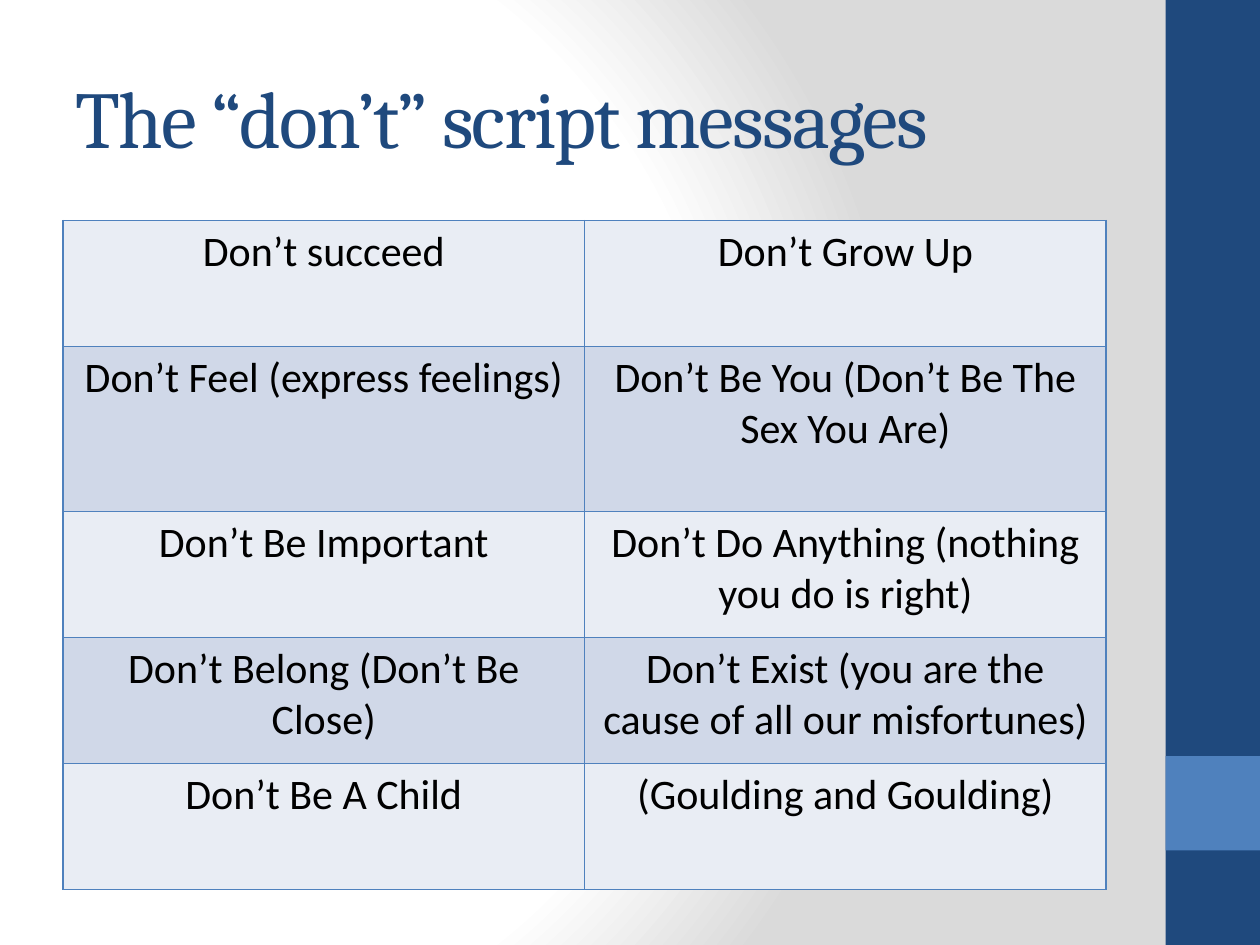
from dataclasses import dataclass

from lxml import etree
from pptx import Presentation
from pptx.dml.color import RGBColor
from pptx.enum.shapes import MSO_SHAPE
from pptx.enum.text import MSO_ANCHOR, PP_ALIGN
from pptx.oxml.ns import qn
from pptx.util import Inches, Pt

RECTANGLE = MSO_SHAPE.RECTANGLE
MIDDLE = MSO_ANCHOR.MIDDLE
LEFT, CENTER = PP_ALIGN.LEFT, PP_ALIGN.CENTER
TITLE_ONLY = 5


@dataclass(frozen=True)
class Theme:
    """Colours, fonts and sizes of the deck."""
    navy: str = "1F497D"
    blue: str = "4F81BD"
    black: str = "000000"
    bands: tuple = ("E9EDF4", "D0D8E8")
    backdrop: tuple = ((0, "FFFFFF"), (75, "FFFFFF"), (100, "DADADA"))
    title_font: str = "Cambria"
    body_font: str = "Calibri"
    title_size: int = 46
    body_size: int = 24
    border_width: int = 1


THEME = Theme()

MESSAGES = [
    ("Don’t succeed", "Don’t Grow Up"),
    ("Don’t Feel (express feelings)", "Don’t Be You (Don’t Be The Sex You Are)"),
    ("Don’t Be Important", "Don’t Do Anything (nothing you do is right)"),
    ("Don’t Belong (Don’t Be Close)",
     "Don’t Exist (you are the cause of all our misfortunes)"),
    ("Don’t Be A Child", "(Goulding and Goulding)"),
]
ROW_HEIGHTS = [1, 1.31, 1, 1, 1]
COLUMN_WIDTH = 4.14


def add_node(parent, tag, **attributes):
    """Append an XML child and return it."""
    return etree.SubElement(parent, qn(tag), attributes)


def write_text(frame, text, *, font, size, color, align=LEFT, spacing=None):
    """Fill a text frame with one formatted paragraph."""
    para = frame.paragraphs[0]
    para.alignment = align
    span = para.add_run()
    span.text = text
    span.font.name = font
    span.font.size = Pt(size)
    span.font.color.rgb = RGBColor.from_string(color)
    if spacing is not None:
        span.font._element.set("spc", str(spacing * 100))


def set_backdrop(page):
    """Give the page its circular gradient background."""
    page.background.fill.solid()
    properties = page._element.find(".//" + qn("p:bgPr"))
    properties.remove(properties.find(qn("a:solidFill")))
    gradient = etree.Element(qn("a:gradFill"), rotWithShape="1")
    properties.insert(0, gradient)
    stops = add_node(gradient, "a:gsLst")
    for position, color in THEME.backdrop:
        stop = add_node(stops, "a:gs", pos=str(position * 1000))
        add_node(stop, "a:srgbClr", val=color)
    circle = add_node(gradient, "a:path", path="circle")
    add_node(circle, "a:fillToRect", l="20000", t="50000", r="100000", b="50000")


def add_block(page, left, top, width, height, color):
    """Add a plain filled rectangle."""
    block = page.shapes.add_shape(
        RECTANGLE, Inches(left), Inches(top), Inches(width), Inches(height))
    block.shadow.inherit = False
    block.fill.solid()
    block.fill.fore_color.rgb = RGBColor.from_string(color)
    block.line.fill.background()


def set_title(page, text):
    """Place and format the title placeholder."""
    title = page.shapes.title
    title.left, title.top = Inches(0.5), Inches(0.3)
    title.width, title.height = Inches(8.33), Inches(1.25)
    title.text_frame.vertical_anchor = MIDDLE
    title.text_frame.word_wrap = True
    write_text(title.text_frame, text, font=THEME.title_font,
               size=THEME.title_size, color=THEME.navy, spacing=-1)


def set_borders(cell):
    """Draw a thin line on all four sides of a cell."""
    properties = cell._tc.get_or_add_tcPr()
    for index, side in enumerate(("a:lnL", "a:lnR", "a:lnT", "a:lnB")):
        line = etree.Element(qn(side), w=str(Pt(THEME.border_width)))
        properties.insert(index, line)
        fill = add_node(line, "a:solidFill")
        add_node(fill, "a:srgbClr", val=THEME.blue)


def add_message_table(page):
    """Add the banded table of script messages."""
    columns = len(MESSAGES[0])
    table = page.shapes.add_table(
        len(MESSAGES), columns, Inches(0.5), Inches(1.75),
        Inches(columns * COLUMN_WIDTH), Inches(sum(ROW_HEIGHTS))).table
    table.first_row = table.horz_banding = False
    for column in table.columns:
        column.width = Inches(COLUMN_WIDTH)
    for row, (height, messages) in enumerate(zip(ROW_HEIGHTS, MESSAGES)):
        table.rows[row].height = Inches(height)
        band = THEME.bands[row % len(THEME.bands)]
        for cell, message in zip(table.rows[row].cells, messages):
            cell.fill.solid()
            cell.fill.fore_color.rgb = RGBColor.from_string(band)
            set_borders(cell)
            write_text(cell.text_frame, message, font=THEME.body_font,
                       size=THEME.body_size, color=THEME.black, align=CENTER)


def main():
    """Build the slide and save the deck."""
    deck = Presentation()
    deck.slide_width, deck.slide_height = Inches(10), Inches(7.5)
    page = deck.slides.add_slide(deck.slide_layouts[TITLE_ONLY])
    set_backdrop(page)
    add_block(page, 9.25, 0, 0.75, 7.5, THEME.navy)
    add_block(page, 9.25, 6, 0.75, 0.75, THEME.blue)
    set_title(page, "The “don’t” script messages")
    add_message_table(page)
    deck.save("out.pptx")


if __name__ == "__main__":
    main()
